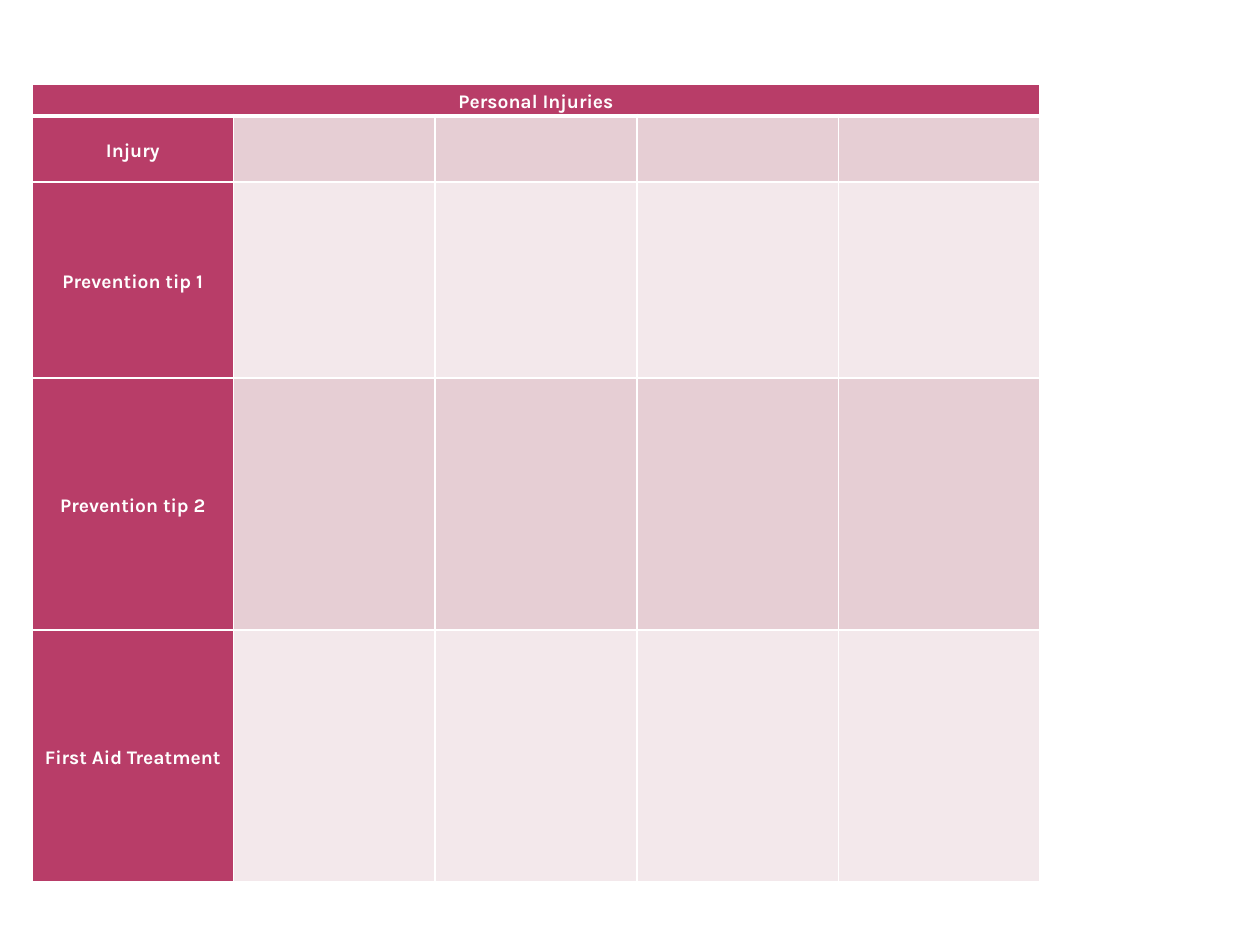
from lxml import etree
from pptx import Presentation
from pptx import util as u
from pptx.dml.color import RGBColor
from pptx.enum import text
from pptx.oxml.ns import qn

PX = 914400 / 126
WHITE = RGBColor(0xFF, 0xFF, 0xFF)
BERRY = RGBColor(0xB8, 0x3D, 0x68)
ROSE = RGBColor(0xE6, 0xCE, 0xD4)
BLUSH = RGBColor(0xF3, 0xE8, 0xEB)

LABELS = ["Personal Injuries", "Injury", "Prevention tip 1",
          "Prevention tip 2", "First Aid Treatment"]
ROW_HEIGHTS = [32, 66, 196, 252, 252]
COLUMNS = 5
LEFT, TOP, WIDTH = 32, 84, 1008


def px(length):
    return u.Emu(round(length * PX))


def add_border(cell, side, points):
    properties = cell._tc.get_or_add_tcPr()
    line = etree.SubElement(properties, qn("a:" + side), w=str(u.Pt(points)))
    fill = etree.SubElement(line, qn("a:solidFill"))
    etree.SubElement(fill, qn("a:srgbClr"), val=str(WHITE))


deck = Presentation()
deck.slide_width = px(1260)
deck.slide_height = px(945)
page = deck.slides.add_slide(deck.slide_layouts[6])

table = page.shapes.add_table(len(LABELS), COLUMNS, px(LEFT), px(TOP),
                              px(WIDTH), px(sum(ROW_HEIGHTS))).table
for column in table.columns:
    column.width = px(WIDTH / COLUMNS)

for row, (label, height) in enumerate(zip(LABELS, ROW_HEIGHTS)):
    table.rows[row].height = px(height)
    for column in range(COLUMNS):
        cell = table.cell(row, column)
        cell.margin_left = cell.margin_right = px(9)
        cell.margin_top = cell.margin_bottom = 0
        cell.vertical_anchor = text.MSO_ANCHOR.MIDDLE
        for side in ("lnL", "lnR", "lnT", "lnB"):
            heavy = (row, side) in ((0, "lnB"), (1, "lnT"))
            add_border(cell, side, 3 if heavy else 1)
        cell.fill.solid()
        is_label = row == 0 or column == 0
        cell.fill.fore_color.rgb = BERRY if is_label else (ROSE if row % 2 else BLUSH)

        para = cell.text_frame.paragraphs[0]
        if column == 0:
            para.text = label
        para.alignment = text.PP_ALIGN.CENTER
        para.line_spacing = 1.15
        para.font.name = "Karla"
        para.font.size = u.Pt(11)
        para.font.bold = True
        para.font.color.rgb = WHITE

table.cell(0, 0).merge(table.cell(0, COLUMNS - 1))

deck.save("out.pptx")
